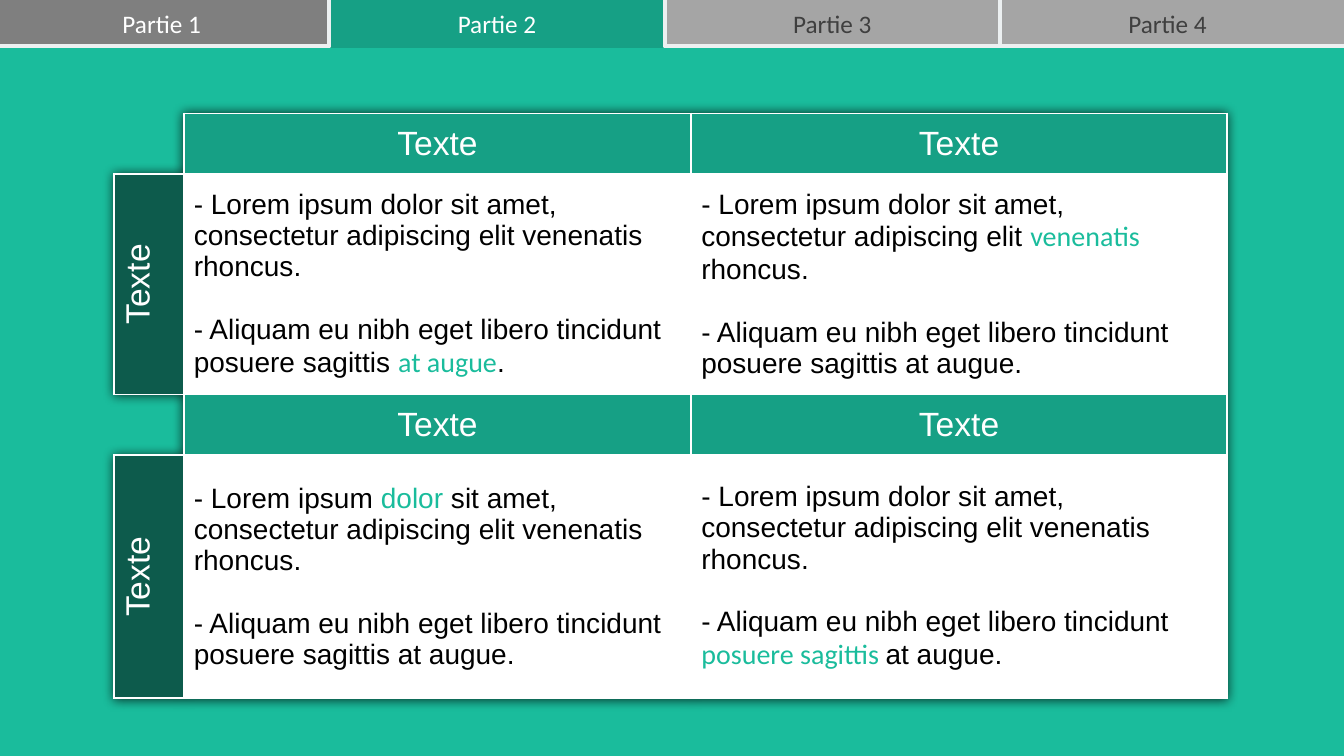
from lxml import etree
from pptx import Presentation
from pptx.dml.color import RGBColor
from pptx.enum import shapes, text
from pptx.oxml import ns
from pptx.util import Cm, Pt

TEAL = RGBColor(0x1A, 0xBC, 0x9C)
TEAL_MID = RGBColor(0x16, 0xA0, 0x85)
TEAL_DARK = RGBColor(0x0D, 0x5B, 0x4C)
GREY_DARK = RGBColor(0x7F, 0x7F, 0x7F)
GREY = RGBColor(0xA5, 0xA5, 0xA5)
GREY_TEXT = RGBColor(0x3F, 0x3F, 0x3F)
CLOUD = RGBColor(0xEC, 0xF0, 0xF1)
WHITE = RGBColor(0xFF, 0xFF, 0xFF)
BLACK = RGBColor(0, 0, 0)
NO_STYLE = "{2D5ABB26-0587-4C30-8999-92F81FD0307C}"


def add_run(p, words, size, color, font="Arial"):
    r = p.add_run()
    r.text = words
    r.font.size = Pt(size)
    r.font.name = font
    r.font.color.rgb = color


def add_borders(cell):
    """Give all four sides of a cell a white line; call before filling it."""
    tc_pr = cell._tc.get_or_add_tcPr()
    for side in ("lnL", "lnR", "lnT", "lnB"):
        ln = etree.SubElement(tc_pr, ns.qn(f"a:{side}"), w=str(Pt(1.5)))
        fill = etree.SubElement(ln, ns.qn("a:solidFill"))
        etree.SubElement(fill, ns.qn("a:srgbClr"), val=str(WHITE))


prs = Presentation()
prs.slide_width, prs.slide_height = Cm(33.87), Cm(19.05)
slide = prs.slides.add_slide(prs.slide_layouts[6])
slide.background.fill.solid()
slide.background.fill.fore_color.rgb = TEAL

# Navigation tabs, the active one at the back
TAB_LEFT, TAB_PITCH = -0.15, 8.45
tabs = [  # number, width, fill, line, text colour
    (2, 8.45, TEAL_MID, TEAL_MID, WHITE),
    (1, 8.45, GREY_DARK, CLOUD, WHITE),
    (3, 8.45, GREY, CLOUD, GREY_TEXT),
    (4, 8.81, GREY, CLOUD, GREY_TEXT),
]
for number, width, fill, line, color in tabs:
    left = Cm(TAB_LEFT + (number - 1) * TAB_PITCH)
    sp = slide.shapes.add_shape(
        shapes.MSO_SHAPE.RECTANGLE, left, Cm(-0.13), Cm(width), Cm(1.3))
    sp.shadow.inherit = False
    sp.fill.solid()
    sp.fill.fore_color.rgb = fill
    sp.line.color.rgb = line
    sp.line.width = Pt(3)

    label = slide.shapes.add_textbox(left, Cm(0.08), Cm(TAB_PITCH), Cm(1.02))
    label.text_frame.word_wrap = True
    p = label.text_frame.paragraphs[0]
    p.alignment = text.PP_ALIGN.CENTER
    add_run(p, f"Partie {number}", 18, color, "Calibri")

# Table: two bands, each with a header row and a body row
col_widths = [1.75, 12.79, 13.5]
row_heights = [1.53, 5.55, 1.53, 6.12]
frame = slide.shapes.add_table(4, 3, Cm(2.88), Cm(2.86),
                               Cm(sum(col_widths)), Cm(sum(row_heights)))
table = frame.table
table.first_row = table.horz_banding = False
for column, width in zip(table.columns, col_widths):
    column.width = Cm(width)
for row, height in zip(table.rows, row_heights):
    row.height = Cm(height)

tbl_pr = table._tbl.tblPr
tbl_pr.find(ns.qn("a:tableStyleId")).text = NO_STYLE
effects = etree.Element(ns.qn("a:effectLst"))
shadow = etree.SubElement(effects, ns.qn("a:outerShdw"), blurRad=str(Pt(8)),
                          dist="0", dir="0", algn="ctr", rotWithShape="0")
black = etree.SubElement(shadow, ns.qn("a:srgbClr"), val=str(BLACK))
etree.SubElement(black, ns.qn("a:alpha"), val="75000")
tbl_pr.insert(0, effects)

# Words between asterisks are highlighted
LOREM = "- Lorem ipsum dolor sit amet, consectetur adipiscing elit venenatis rhoncus."
ALIQUAM = "- Aliquam eu nibh eget libero tincidunt posuere sagittis at augue."
bodies = {
    (1, 1): (LOREM, ALIQUAM.replace("at augue", "*at augue*")),
    (1, 2): (LOREM.replace("venenatis ", "*venenatis *"), ALIQUAM),
    (3, 1): (LOREM.replace("dolor", "*dolor*"), ALIQUAM),
    (3, 2): (LOREM, ALIQUAM.replace("posuere sagittis ", "*posuere sagittis *")),
}

for row in range(4):
    for col in range(3):
        cell = table.cell(row, col)
        is_header = row % 2 == 0
        if is_header and col == 0:
            cell.fill.background()
            continue
        add_borders(cell)
        cell.vertical_anchor = text.MSO_ANCHOR.MIDDLE
        cell.fill.solid()
        tf = cell.text_frame
        p = tf.paragraphs[0]
        if is_header or col == 0:
            cell.fill.fore_color.rgb = TEAL_MID if is_header else TEAL_DARK
            p.alignment = text.PP_ALIGN.CENTER
            add_run(p, "Texte", 24, WHITE)
            if col == 0:
                cell._tc.tcPr.set("vert", "vert270")
            continue
        cell.fill.fore_color.rgb = WHITE
        first, second = bodies[row, col]
        p2 = tf.add_paragraph()
        p2.space_before = Pt(22.5)
        for para, marked in ((p, first), (p2, second)):
            for i, words in enumerate(marked.split("*")):
                if i % 2:
                    font = "Arial" if words == "dolor" else "Calibri"
                    add_run(para, words, 20, TEAL, font)
                else:
                    add_run(para, words, 20, BLACK)

prs.save("out.pptx")
